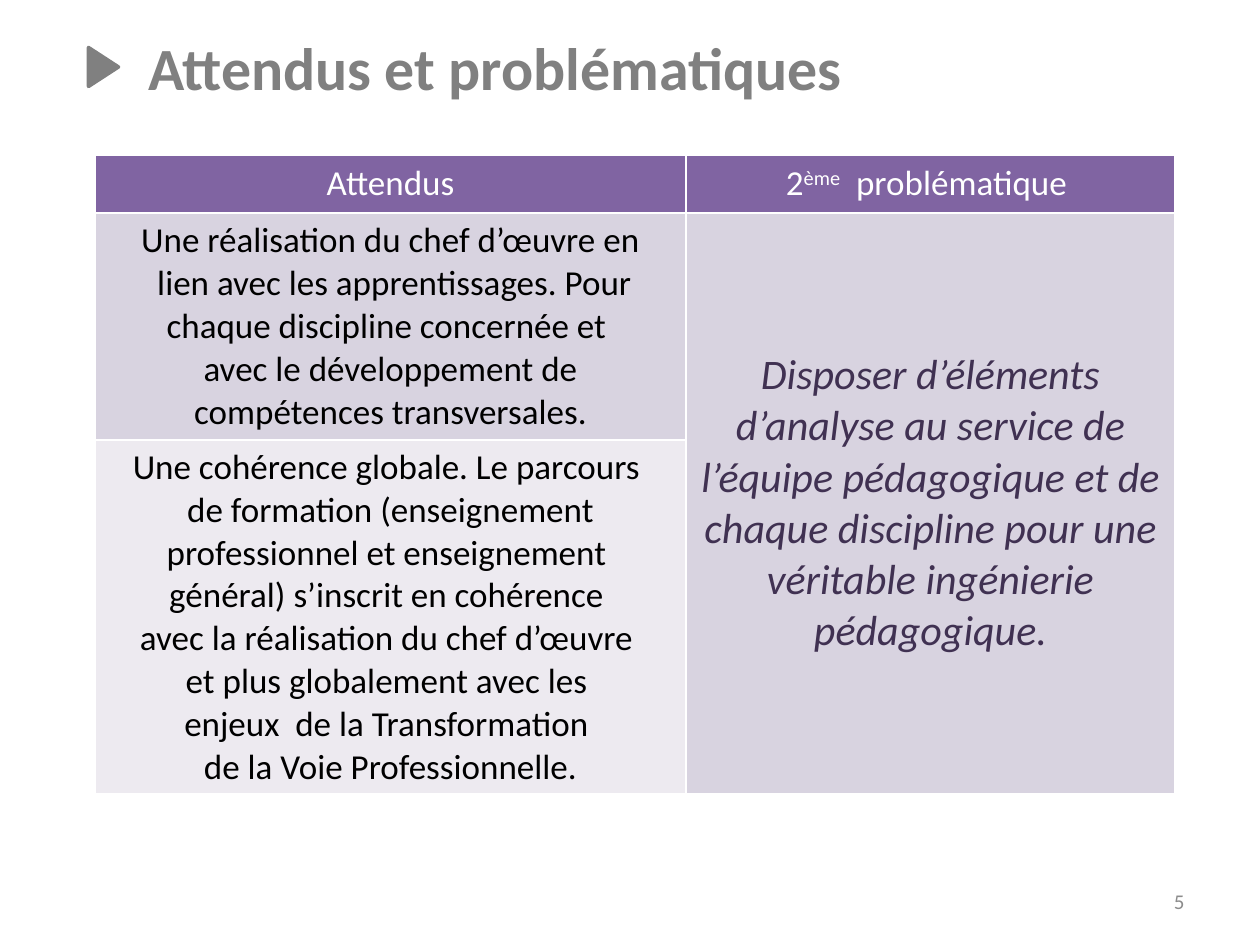
"""Build the slide on expected outcomes and questions, with its table."""
import lxml.etree
import pptx
import pptx.dml.color
import pptx.enum.shapes
import pptx.enum.text
import pptx.oxml.ns
import pptx.util

THEME = {
    "font": "Calibri",
    "grey": "808080", "number": "8C8C8C", "white": "FFFFFF", "black": "000000",
    "header": "8064A2", "band": "D8D3E0", "light": "EDEAF0", "plum": "403152",
    "title_size": 34.2, "cell_size": 20, "question_size": 24, "number_size": 12,
}
SCALE = 914400 / 126
ALIGN = pptx.enum.text.PP_ALIGN
ANCHOR = pptx.enum.text.MSO_ANCHOR
qn = pptx.oxml.ns.qn


def px(*lengths):
    return [pptx.util.Emu(round(length * SCALE)) for length in lengths]


def format_text(text_frame, size, color, align=ALIGN.CENTER, bold=False, italic=False):
    for paragraph in text_frame.paragraphs:
        paragraph.alignment = align
        for run in paragraph.runs:
            run.font.name = THEME["font"]
            run.font.size = pptx.util.Pt(THEME[size])
            run.font.color.rgb = pptx.dml.color.RGBColor.from_string(THEME[color])
            run.font.bold = bold
            run.font.italic = italic


presentation = pptx.Presentation()
presentation.slide_width, presentation.slide_height = px(1260, 945)
slide = presentation.slides.add_slide(presentation.slide_layouts[5])

title = slide.shapes.title
title.left, title.top, title.width, title.height = px(-25, 24, 1040, 98)
title.text_frame.text = "Attendus et problématiques"
title.text_frame.auto_size = pptx.enum.text.MSO_AUTO_SIZE.NONE
title.text_frame.vertical_anchor = ANCHOR.TOP
format_text(title.text_frame, "title_size", "grey", bold=True)

marker = slide.shapes.add_shape(
    pptx.enum.shapes.MSO_SHAPE.ISOSCELES_TRIANGLE, *px(84, 52, 39, 30))
marker.rotation = 90
marker.shadow.inherit = False
marker.fill.solid()
grey = pptx.dml.color.RGBColor.from_string(THEME["grey"])
marker.fill.fore_color.rgb = grey
marker.line.color.rgb = grey
marker.line.width = pptx.util.Pt(2)
lxml.etree.SubElement(marker.element.spPr.find(qn("a:ln")), qn("a:round"))

number = slide.shapes.add_textbox(*px(903, 876, 294, 50))
number.text_frame.word_wrap = True
number.text_frame.vertical_anchor = ANCHOR.MIDDLE
number.text_frame.text = "5"
format_text(number.text_frame, "number_size", "number", ALIGN.RIGHT)

achievement = [
    "Une réalisation du chef d’œuvre en",
    " lien avec les apprentissages. Pour chaque discipline concernée et ",
    "avec le développement de compétences transversales.",
]
coherence = [
    "Une cohérence globale. Le parcours ",
    "de formation (enseignement professionnel et enseignement ",
    "général) s’inscrit en cohérence ",
    "avec la réalisation du chef d’œuvre ",
    "et plus globalement avec les ",
    "enjeux  de la Transformation ",
    "de la Voie Professionnelle.",
]
question = (
    "Disposer d’éléments d’analyse au service de l’équipe pédagogique et de "
    "chaque discipline pour une véritable ingénierie pédagogique."
)
cells = [
    (0, 0, "Attendus", "header", "cell_size", "white", False),
    (0, 1, "2", "header", "cell_size", "white", False),
    (1, 0, "\n".join(achievement), "band", "cell_size", "black", False),
    (1, 1, question, "band", "question_size", "plum", True),
    (2, 0, "\n".join(coherence), "light", "cell_size", "black", False),
    (2, 1, "", "band", "question_size", "plum", True),
]

column_widths = px(591, 489)
row_heights = px(58, 227, 354)
table = slide.shapes.add_table(3, 2, *px(95, 155, 1080, 639)).table
for column, width in zip(table.columns, column_widths):
    column.width = width
for row, height in zip(table.rows, row_heights):
    row.height = height
table.cell(1, 1).merge(table.cell(2, 1))

for row_index, column_index, text, fill, size, color, italic in cells:
    cell = table.cell(row_index, column_index)
    properties = cell._tc.get_or_add_tcPr()
    for side in ("a:lnL", "a:lnR", "a:lnT", "a:lnB"):
        border = lxml.etree.SubElement(properties, qn(side), w="12700")
        border_fill = lxml.etree.SubElement(border, qn("a:solidFill"))
        lxml.etree.SubElement(border_fill, qn("a:srgbClr"), val=THEME["white"])
    cell.fill.solid()
    cell.fill.fore_color.rgb = pptx.dml.color.RGBColor.from_string(THEME[fill])
    cell.vertical_anchor = ANCHOR.MIDDLE
    cell.margin_left, cell.margin_right, cell.margin_top, cell.margin_bottom = px(12, 12, 6, 6)
    cell.text_frame.text = text
    if (row_index, column_index) == (0, 1):
        paragraph = cell.text_frame.paragraphs[0]
        ordinal = paragraph.add_run()
        ordinal.text = "ème"
        ordinal._r.get_or_add_rPr().set("baseline", "30000")
        paragraph.add_run().text = "  problématique "
    format_text(cell.text_frame, size, color, italic=italic)

presentation.save("out.pptx")
